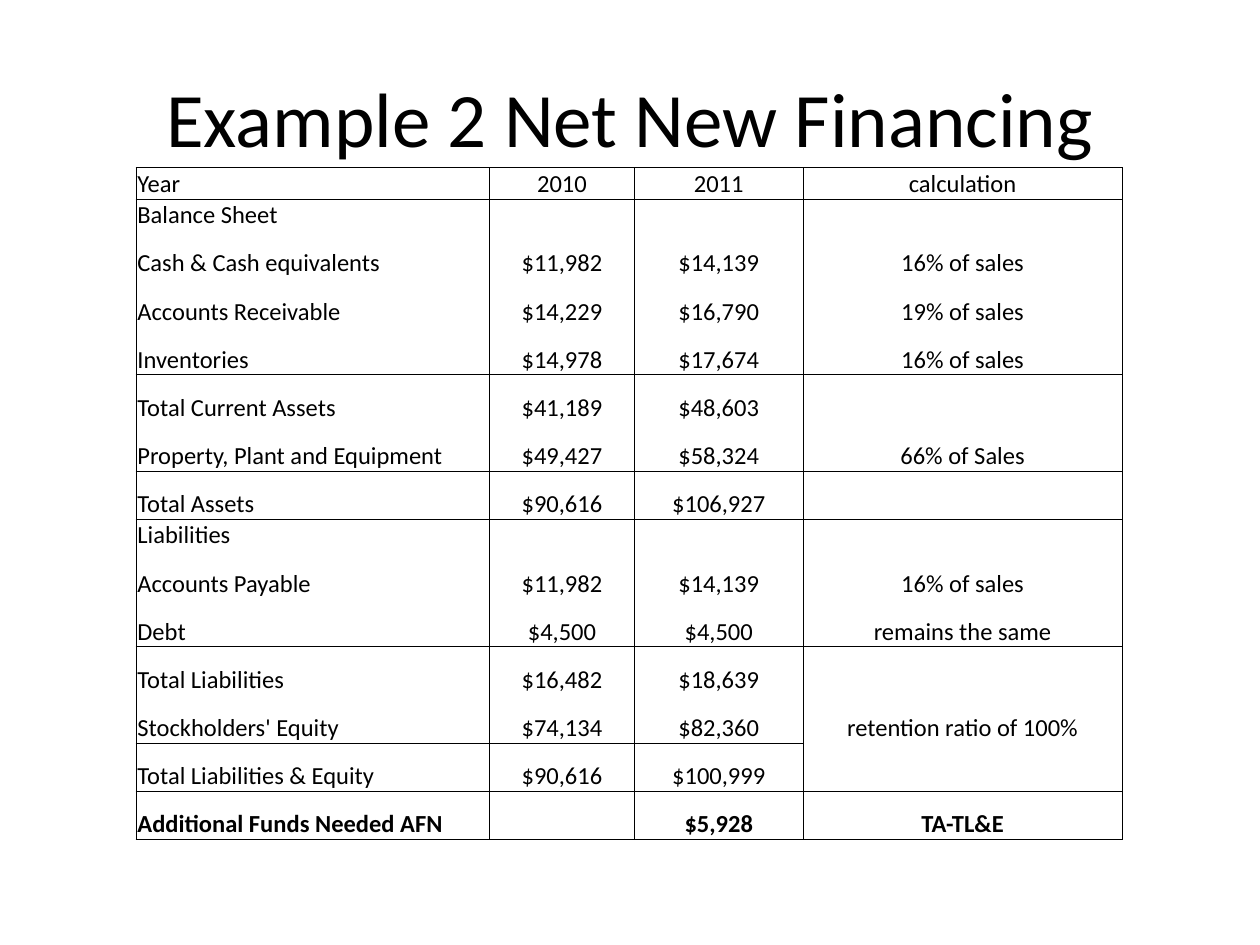
from lxml.etree import SubElement
from pptx import Presentation
from pptx.dml.color import RGBColor
from pptx.enum.text import MSO_ANCHOR as Anchor, PP_ALIGN as Align
from pptx.oxml.ns import qn
from pptx.util import Cm, Pt

BLACK = RGBColor(0x00, 0x00, 0x00)
FONT_NAME = "Calibri"
BODY_SIZE = 14
RULE_WIDTH = Pt(0.5)

COLUMN_WIDTHS = (7.13, 2.92, 3.4, 6.43)
LOW_ROW, TALL_ROW = 0.62, 0.97
LOW_ROWS = ("Year", "Balance Sheet", "Liabilities")
ROWS = (
    ("Year", "2010", "2011", "calculation"),
    ("Balance Sheet", "", "", ""),
    ("Cash & Cash equivalents", "$11,982", "$14,139", "16% of sales"),
    ("Accounts Receivable", "$14,229", "$16,790", "19% of sales"),
    ("Inventories", "$14,978", "$17,674", "16% of sales"),
    ("Total Current Assets", "$41,189", "$48,603", ""),
    ("Property, Plant and Equipment", "$49,427", "$58,324", "66% of Sales"),
    ("Total Assets", "$90,616", "$106,927", ""),
    ("Liabilities", "", "", ""),
    ("Accounts Payable", "$11,982", "$14,139", "16% of sales"),
    ("Debt", "$4,500", "$4,500", "remains the same"),
    ("Total Liabilities", "$16,482", "$18,639", ""),
    ("Stockholders' Equity", "$74,134", "$82,360", "retention ratio of 100%"),
    ("Total Liabilities & Equity", "$90,616", "$100,999", ""),
    ("Additional Funds Needed AFN", "", "$5,928", "TA-TL&E"),
)
LAST_ROW = len(ROWS) - 1
LAST_COLUMN = len(COLUMN_WIDTHS) - 1
RULED_ROWS = {0, 4, 6, 7, 10, 12, 13, LAST_ROW}
EQUITY_ROW = 12

CELL_FORMAT = {
    "vertical_anchor": Anchor.BOTTOM,
    "margin_left": Cm(0.03),
    "margin_right": Cm(0.03),
    "margin_top": Cm(0.03),
    "margin_bottom": 0,
}


def apply_format(target, values):
    for name, value in values.items():
        setattr(target, name, value)


def style_font(font, size, bold=False):
    apply_format(font, {"name": FONT_NAME, "size": Pt(size), "bold": bold})
    font.color.rgb = BLACK


def add_title(slide, text):
    title = slide.shapes.title
    apply_format(title, {"left": Cm(1.27), "top": Cm(0.76),
                         "width": Cm(22.86), "height": Cm(3.18)})
    title.text_frame.vertical_anchor = Anchor.MIDDLE
    paragraph = title.text_frame.paragraphs[0]
    paragraph.alignment = Align.CENTER
    run = paragraph.add_run()
    run.text = text
    style_font(run.font, 44)


def has_rule_below(row, column):
    """The calculation cell beside equity runs on into the next row."""
    if row == EQUITY_ROW and column == LAST_COLUMN:
        return False
    return row in RULED_ROWS


def set_borders(cell, row, column):
    top = row == 0 or has_rule_below(row - 1, column)
    sides = {"a:lnL": True, "a:lnR": True, "a:lnT": top,
             "a:lnB": has_rule_below(row, column)}
    properties = cell._tc.get_or_add_tcPr()
    for tag, visible in sides.items():
        line = SubElement(properties, qn(tag), w=str(RULE_WIDTH))
        if visible:
            fill = SubElement(line, qn("a:solidFill"))
            SubElement(fill, qn("a:srgbClr"), val=str(BLACK))
        else:
            SubElement(line, qn("a:noFill"))


def fill_cell(cell, text, row, column):
    apply_format(cell, CELL_FORMAT)
    set_borders(cell, row, column)
    cell.fill.background()
    paragraph = cell.text_frame.paragraphs[0]
    paragraph.alignment = Align.CENTER if column else Align.LEFT
    if text:
        run = paragraph.add_run()
        run.text = text
        style_font(run.font, BODY_SIZE, bold=row == LAST_ROW)
    else:
        # The end mark's size keeps an empty cell from stretching its row.
        SubElement(paragraph._p, qn("a:endParaRPr"), sz=str(BODY_SIZE * 100))


def add_balance_table(slide):
    heights = [LOW_ROW if row[0] in LOW_ROWS else TALL_ROW for row in ROWS]
    frame = slide.shapes.add_table(
        len(ROWS), len(COLUMN_WIDTHS), Cm(2.74), Cm(3.38),
        Cm(sum(COLUMN_WIDTHS)), Cm(sum(heights)))
    table = frame.table
    apply_format(table, {"first_row": False, "horz_banding": False})
    for column, width in zip(table.columns, COLUMN_WIDTHS):
        column.width = Cm(width)
    for row, height in zip(table.rows, heights):
        row.height = Cm(height)
    for row, texts in enumerate(ROWS):
        for column, text in enumerate(texts):
            fill_cell(table.cell(row, column), text, row, column)


def main():
    presentation = Presentation()
    apply_format(presentation, {"slide_width": Cm(25.4),
                                "slide_height": Cm(19.05)})
    slide = presentation.slides.add_slide(presentation.slide_layouts[5])
    add_title(slide, "Example 2 Net New Financing")
    add_balance_table(slide)
    presentation.save("out.pptx")


if __name__ == "__main__":
    main()
